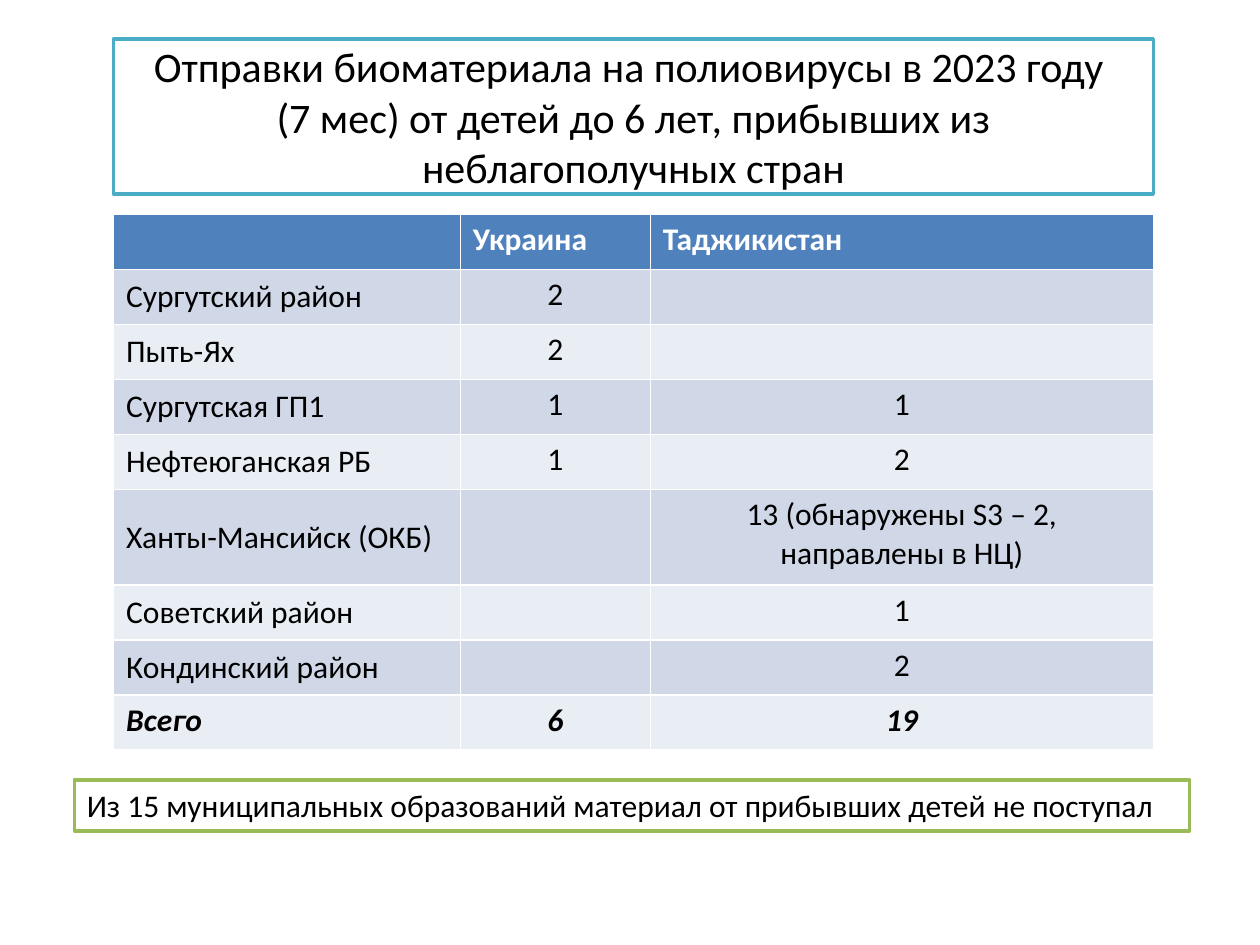
from dataclasses import dataclass

from pptx import Presentation
from pptx.dml.color import RGBColor
from pptx.enum import text
from pptx.util import Cm, Pt


@dataclass(frozen=True)
class Theme:
    font: str = "Calibri"
    title_size: float = 24
    body_size: float = 18
    line_width: float = 2
    ink: str = "000000"
    paper: str = "FFFFFF"
    header: str = "4F81BD"
    bands: tuple[str, str] = ("D0D8E8", "E9EDF4")
    title_line: str = "4BACC6"
    note_line: str = "9BBB59"


@dataclass(frozen=True)
class Box:
    left: float
    top: float
    width: float
    height: float


@dataclass(frozen=True)
class District:
    name: str
    ukraine: str = ""
    tajikistan: str = ""
    height: float = 1.11
    total: bool = False


THEME = Theme()
TITLE_BOX = Box(2.29, 0.79, 20.96, 3.12)
TABLE_BOX = Box(2.29, 4.32, 20.96, 10.82)
NOTE_BOX = Box(1.5, 15.72, 22.48, 1.03)
COLUMN_WIDTHS = (6.99, 3.83, 10.14)
TITLE_LINES = (
    "Отправки биоматериала на полиовирусы в 2023 году ",
    "(7 мес) от детей до 6 лет, прибывших из неблагополучных стран",
)
NOTE = "Из 15 муниципальных образований материал от прибывших детей не поступал"
HEADER = District("", "Украина", "Таджикистан")
DISTRICTS = (
    District("Сургутский район", "2"),
    District("Пыть-Ях", "2"),
    District("Сургутская ГП1", "1", "1"),
    District("Нефтеюганская РБ", "1", "2"),
    District("Ханты-Мансийск (ОКБ)", "", "13 (обнаружены S3 – 2, направлены в НЦ)", 1.92),
    District("Советский район", "", "1"),
    District("Кондинский район", "", "2"),
    District("Всего", "6", "19", total=True),
)


def set_attributes(target, values: dict) -> None:
    for name, value in values.items():
        setattr(target, name, value)


def paint(fill, color: str) -> None:
    fill.solid()
    fill.fore_color.rgb = RGBColor.from_string(color)


def format_font(font, size: float, color: str, bold: bool = False, italic: bool = False) -> None:
    set_attributes(font, {"name": THEME.font, "size": Pt(size), "bold": bold, "italic": italic})
    font.color.rgb = RGBColor.from_string(color)


def format_box(shape, box: Box, line_color: str) -> None:
    set_attributes(shape, {
        "left": Cm(box.left), "top": Cm(box.top),
        "width": Cm(box.width), "height": Cm(box.height),
    })
    paint(shape.fill, THEME.paper)
    paint(shape.line.fill, line_color)
    shape.line.width = Pt(THEME.line_width)
    shape.shadow.inherit = False


def draw_title(slide) -> None:
    title = slide.shapes.title
    format_box(title, TITLE_BOX, THEME.title_line)
    set_attributes(title.text_frame, {
        "word_wrap": True,
        "auto_size": text.MSO_AUTO_SIZE.NONE,
        "vertical_anchor": text.MSO_ANCHOR.MIDDLE,
    })
    paragraph = title.text_frame.paragraphs[0]
    paragraph.alignment = text.PP_ALIGN.CENTER
    for index, line in enumerate(TITLE_LINES):
        if index:
            paragraph.add_line_break()
        run = paragraph.add_run()
        run.text = line
        format_font(run.font, THEME.title_size, THEME.ink)


def fill_row(table, index: int, district: District) -> None:
    is_header = index == 0
    table.rows[index].height = Cm(district.height)
    background = THEME.header if is_header else THEME.bands[(index - 1) % 2]
    color = THEME.paper if is_header else THEME.ink
    values = (district.name, district.ukraine, district.tajikistan)
    for column, value in enumerate(values):
        cell = table.cell(index, column)
        paint(cell.fill, background)
        cell.text = value
        paragraph = cell.text_frame.paragraphs[0]
        format_font(paragraph.font, THEME.body_size, color, is_header or district.total, district.total)
        for run in paragraph.runs:
            format_font(run.font, THEME.body_size, color, is_header or district.total, district.total)
        if column and not is_header:
            paragraph.alignment = text.PP_ALIGN.CENTER
        elif not is_header and not district.total:
            cell.vertical_anchor = text.MSO_ANCHOR.MIDDLE


def draw_table(slide) -> None:
    rows = (HEADER, *DISTRICTS)
    table = slide.shapes.add_table(
        len(rows), len(COLUMN_WIDTHS), Cm(TABLE_BOX.left), Cm(TABLE_BOX.top),
        Cm(TABLE_BOX.width), Cm(TABLE_BOX.height),
    ).table
    for column, width in zip(table.columns, COLUMN_WIDTHS):
        column.width = Cm(width)
    for index, district in enumerate(rows):
        fill_row(table, index, district)


def draw_note(slide) -> None:
    note = slide.shapes.add_textbox(0, 0, 0, 0)
    format_box(note, NOTE_BOX, THEME.note_line)
    set_attributes(note.text_frame, {
        "text": NOTE,
        "word_wrap": False,
        "auto_size": text.MSO_AUTO_SIZE.SHAPE_TO_FIT_TEXT,
    })
    format_font(note.text_frame.paragraphs[0].runs[0].font, THEME.body_size, THEME.ink)


def main() -> None:
    presentation = Presentation()
    set_attributes(presentation, {"slide_width": Cm(25.4), "slide_height": Cm(19.05)})
    slide = presentation.slides.add_slide(presentation.slide_layouts.get_by_name("Title Only"))
    draw_title(slide)
    draw_table(slide)
    draw_note(slide)
    presentation.save("out.pptx")


if __name__ == "__main__":
    main()
